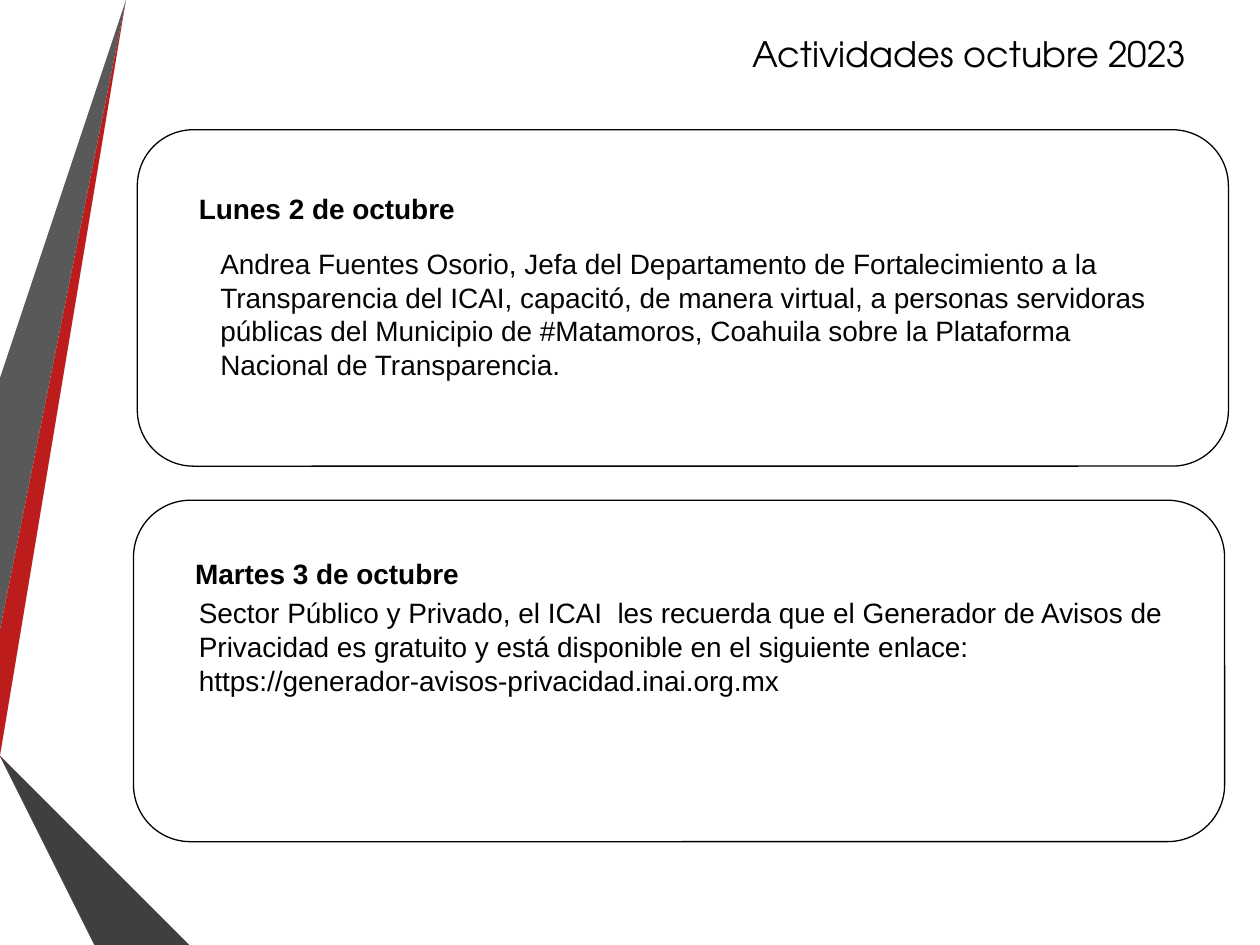
from pptx import Presentation
from pptx.dml.color import RGBColor
from pptx.enum.shapes import MSO_SHAPE as Shape
from pptx.enum.text import MSO_AUTO_SIZE as AutoSize, PP_ALIGN as Align
from pptx.util import Inches, Pt


def color(value):
    return RGBColor.from_string(value)


def add_text(left, top, width, height, text, size=16, font="Arial",
             ink="000000", bold=False, align=Align.LEFT):
    box = slide.shapes.add_textbox(Inches(left), Inches(top), Inches(width), Inches(height))
    box.text_frame.word_wrap = True
    box.text_frame.auto_size = AutoSize.SHAPE_TO_FIT_TEXT
    box.text_frame.text = text
    paragraph = box.text_frame.paragraphs[0]
    paragraph.alignment = align
    run = paragraph.runs[0]
    run.font.size = Pt(size)
    run.font.name = font
    run.font.bold = bold
    run.font.color.rgb = color(ink)


presentation = Presentation()
presentation.slide_width = Inches(10)
presentation.slide_height = Inches(7.5)
slide = presentation.slides.add_slide(presentation.slide_layouts[6])

ribbons = [
    ("BC1C1C", [(0, 5.44), (0, 5.75), (0.22, 5.79), (1.17, 0), (0.89, 0)]),
    ("595959", [(0.83, 0), (0.55, 0), (0, 3.36), (0, 5.06)]),
    ("262626", [(0, 6.19), (0, 6.21), (0.93, 7.5), (0.99, 7.5)]),
    ("5E0D0E", [(0, 5.79), (0, 5.8), (1.56, 7.5), (1.63, 7.5)]),
    ("8D1415", [(0, 5.79), (1.63, 7.5), (2.33, 7.5), (0.22, 5.79), (0, 5.75)]),
    ("3F3F3F", [(0, 6.19), (0.99, 7.5), (1.51, 7.5), (0, 5.86)]),
]
for fill, points in ribbons:
    builder = slide.shapes.build_freeform(*points[0], scale=Inches(1))
    builder.add_line_segments(points[1:], close=True)
    ribbon = builder.convert_to_shape()
    ribbon.shadow.inherit = False
    ribbon.fill.solid()
    ribbon.fill.fore_color.rgb = color(fill)
    ribbon.line.fill.background()

add_text(5.63, 0.21, 4.13, 0.44, "Actividades octubre 2023",
         size=20, font="TeX Gyre Adventor", align=Align.CENTER)

for left, top, height in [(1.09, 1.03, 2.67), (1.06, 3.97, 2.71)]:
    frame = slide.shapes.add_shape(Shape.FLOWCHART_ALTERNATE_PROCESS, Inches(left),
                                   Inches(top), Inches(8.66), Inches(height))
    frame.shadow.inherit = False
    frame.fill.background()
    frame.line.color.rgb = color("000000")
    frame.line.width = Pt(0.75)

add_text(1.48, 4.68, 7.88, 0.91,
         "Sector Público y Privado, el ICAI  les recuerda que el Generador de Avisos de "
         "Privacidad es gratuito y está disponible en el siguiente enlace: "
         "https://generador-avisos-privacidad.inai.org.mx")
add_text(1.48, 1.47, 7.88, 0.37, "Lunes 2 de octubre", bold=True)
add_text(1.65, 1.91, 7.72, 1.45,
         "Andrea Fuentes Osorio, Jefa del Departamento de Fortalecimiento a la "
         "Transparencia del ICAI, capacitó, de manera virtual, a personas servidoras "
         "públicas del Municipio de #Matamoros, Coahuila sobre la Plataforma "
         "Nacional de Transparencia.", ink="050505")
add_text(1.45, 4.37, 7.88, 0.37, "Martes 3 de octubre", bold=True)

presentation.save("out.pptx")
